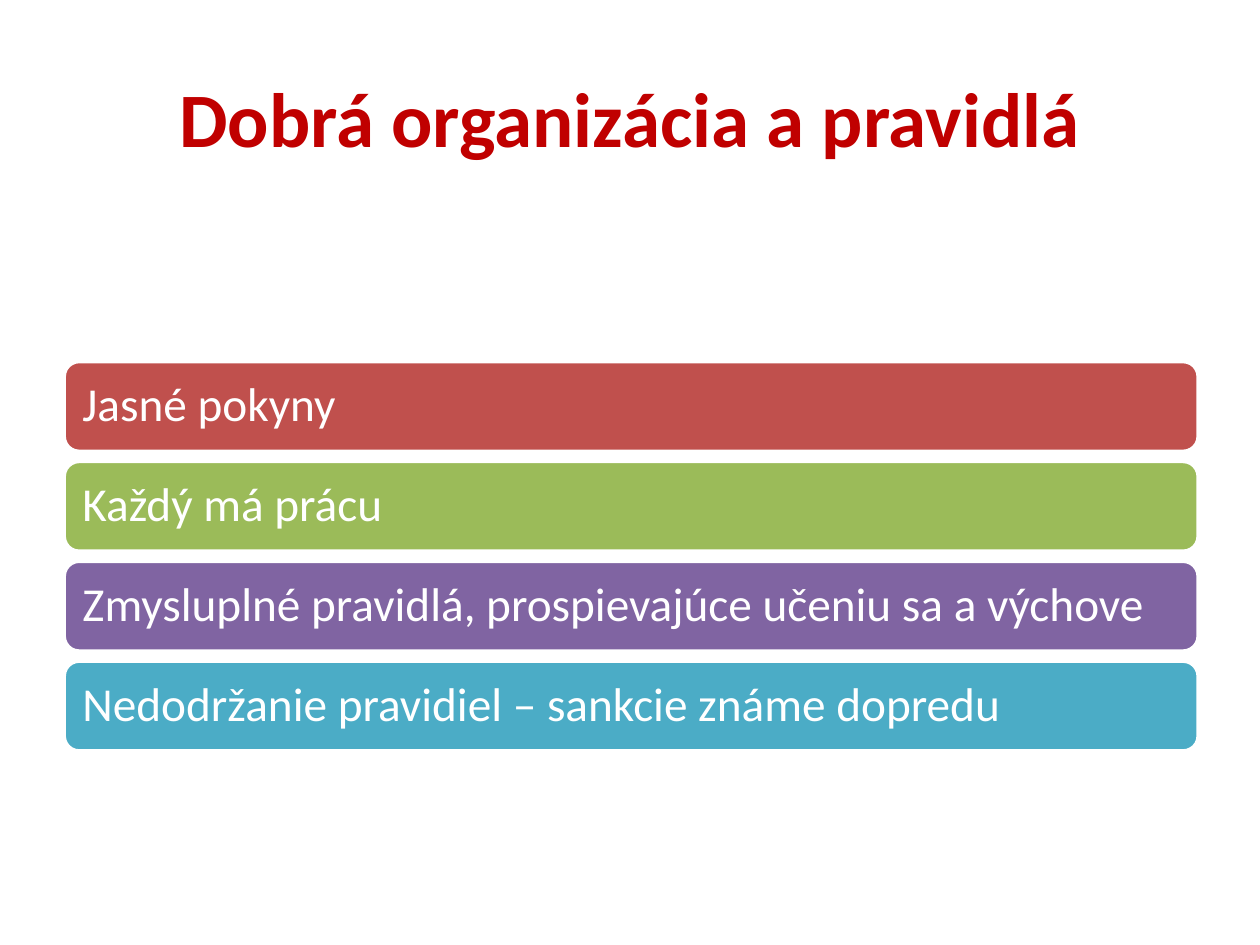
from dataclasses import dataclass

from pptx import Presentation
from pptx.dml.color import RGBColor
from pptx.enum.shapes import MSO_SHAPE
from pptx.enum.text import MSO_ANCHOR, PP_ALIGN
from pptx.util import Inches, Pt

ROUNDED_RECTANGLE = MSO_SHAPE.ROUNDED_RECTANGLE
MIDDLE = MSO_ANCHOR.MIDDLE
LEFT, CENTER = PP_ALIGN.LEFT, PP_ALIGN.CENTER
BLANK_LAYOUT = 6


@dataclass(frozen=True)
class Theme:
    """Colours, font and type sizes of the slide."""
    font: str = "Calibri"
    title_color: str = "C00000"
    light: str = "FFFFFF"
    bar_colors: tuple = ("C0504D", "9BBB59", "8064A2", "4BACC6")
    title_size: int = 44
    bar_size: int = 27
    bar_outline: int = 2


THEME = Theme()
TITLE = "Dobrá organizácia a pravidlá"
RULES = (
    "Jasné pokyny",
    "Každý má prácu",
    "Zmysluplné pravidlá, prospievajúce učeniu sa a výchove",
    "Nedodržanie pravidiel – sankcie známe dopredu",
)


def write_text(shape, text, *, size, color, bold=False, align=LEFT,
               inset=0.1, line_spacing=1.0):
    """Write one vertically centred paragraph into a shape."""
    frame = shape.text_frame
    frame.word_wrap = True
    frame.vertical_anchor = MIDDLE
    frame.margin_left = frame.margin_right = Inches(inset)
    frame.margin_top = frame.margin_bottom = Inches(inset)
    paragraph = frame.paragraphs[0]
    paragraph.alignment = align
    paragraph.line_spacing = line_spacing
    run = paragraph.add_run()
    run.text = text
    run.font.name = THEME.font
    run.font.size = Pt(size)
    run.font.bold = bold
    run.font.color.rgb = RGBColor.from_string(color)


def add_title(slide, text, left, top, width, height):
    """Place the centred heading in the given box."""
    heading = slide.shapes.add_textbox(
        Inches(left), Inches(top), Inches(width), Inches(height))
    write_text(heading, text, size=THEME.title_size, color=THEME.title_color,
               bold=True, align=CENTER, inset=0.05)


def add_rule_bars(slide, rules, left, top, width, height, gap=0.08):
    """Stack one coloured bar per rule, evenly spaced in the given box."""
    bar_height = (height - gap * (len(rules) - 1)) / len(rules)
    for index, (rule, color) in enumerate(zip(rules, THEME.bar_colors)):
        bar_top = top + index * (bar_height + gap)
        bar = slide.shapes.add_shape(
            ROUNDED_RECTANGLE, Inches(left), Inches(bar_top),
            Inches(width), Inches(bar_height))
        bar.shadow.inherit = False
        bar.fill.solid()
        bar.fill.fore_color.rgb = RGBColor.from_string(color)
        bar.line.color.rgb = RGBColor.from_string(THEME.light)
        bar.line.width = Pt(THEME.bar_outline)
        write_text(bar, rule, size=THEME.bar_size, color=THEME.light,
                   inset=0.11, line_spacing=0.9)


def main():
    """Build and save the presentation."""
    presentation = Presentation()
    presentation.slide_width = Inches(10)
    presentation.slide_height = Inches(7.5)
    slide = presentation.slides.add_slide(
        presentation.slide_layouts[BLANK_LAYOUT])
    add_title(slide, TITLE, 0.5, 0.3, 9, 1.25)
    add_rule_bars(slide, RULES, 0.51, 2.87, 9, 3.09)
    presentation.save("out.pptx")


if __name__ == "__main__":
    main()
